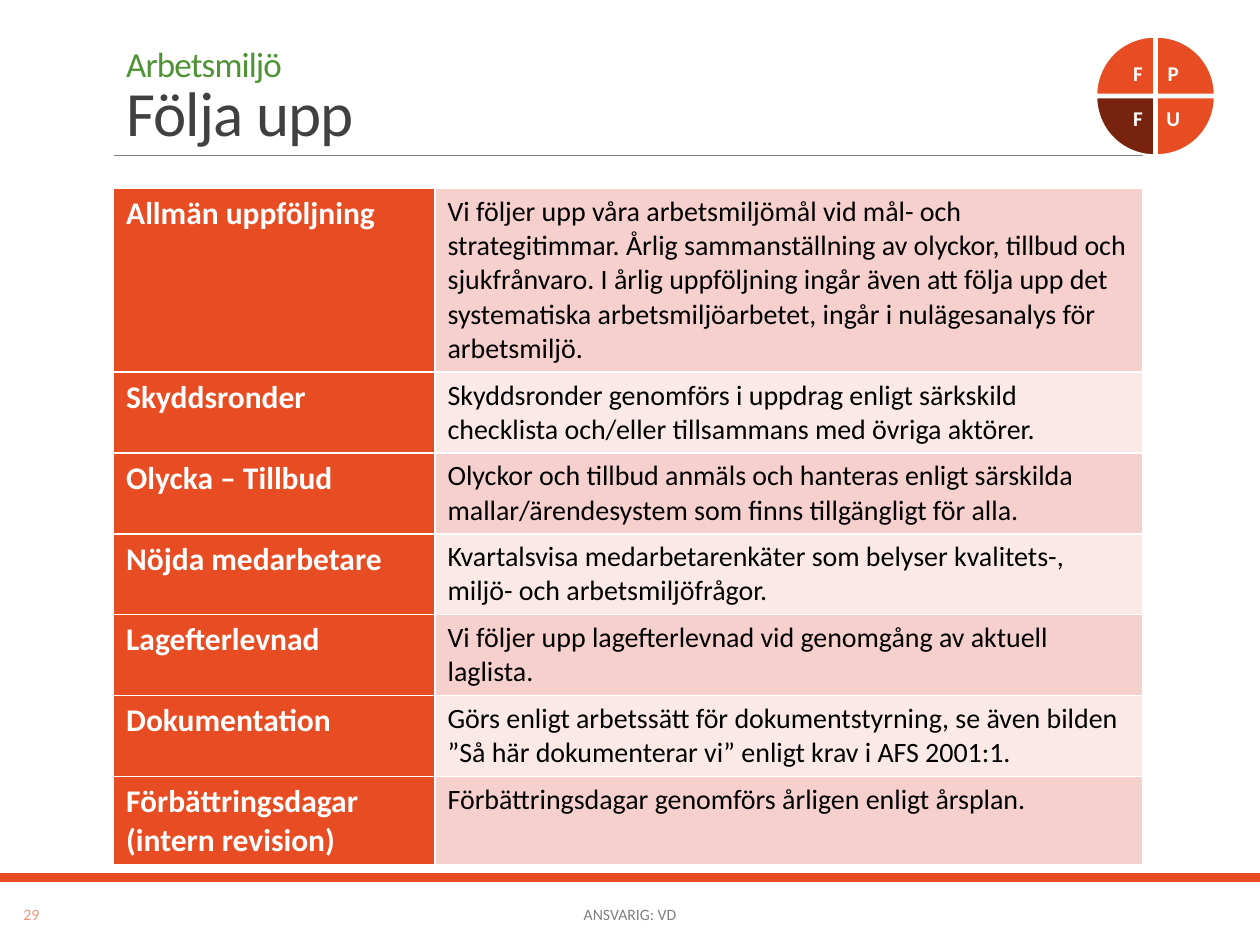
from lxml.etree import SubElement
from pptx import Presentation
from pptx.dml.color import RGBColor
from pptx.enum.shapes import MSO_CONNECTOR, MSO_SHAPE
from pptx.enum.text import MSO_ANCHOR, MSO_AUTO_SIZE, PP_ALIGN
from pptx.oxml.ns import qn
from pptx.util import Cm, Pt

ORANGE = RGBColor(0xE8, 0x4C, 0x22)
LIGHT_ORANGE = RGBColor(0xF1, 0x94, 0x7A)
BROWN = RGBColor(0x78, 0x23, 0x0D)
GREEN = RGBColor(0x4F, 0x94, 0x34)
DARK_GREY = RGBColor(0x40, 0x40, 0x40)
GREY = RGBColor(0x80, 0x80, 0x80)
WHITE = RGBColor(0xFF, 0xFF, 0xFF)
BLACK = RGBColor(0, 0, 0)
BANDS = (RGBColor(0xF6, 0xD0, 0xCD), RGBColor(0xFB, 0xE9, 0xE8))
FONT = "Calibri"

FOLLOW_UPS = [
    ("Allmän uppföljning", "Vi följer upp våra arbetsmiljömål vid mål- och strategitimmar. "
     "Årlig sammanställning av olyckor, tillbud och sjukfrånvaro. I årlig uppföljning ingår "
     "även att följa upp det systematiska arbetsmiljöarbetet, ingår i nulägesanalys för "
     "arbetsmiljö.", 3.7),
    ("Skyddsronder", "Skyddsronder genomförs i uppdrag enligt särkskild checklista och/eller "
     "tillsammans med övriga aktörer.", 1.63),
    ("Olycka – Tillbud", "Olyckor och tillbud anmäls och hanteras enligt särskilda "
     "mallar/ärendesystem som finns tillgängligt för alla.", 1.63),
    ("Nöjda medarbetare", "Kvartalsvisa medarbetarenkäter som belyser kvalitets-, miljö- och "
     "arbetsmiljöfrågor.", 1.63),
    ("Lagefterlevnad", "Vi följer upp lagefterlevnad vid genomgång av aktuell laglista.", 1.63),
    ("Dokumentation", "Görs enligt arbetssätt för dokumentstyrning, se även bilden ”Så här "
     "dokumenterar vi” enligt krav i AFS 2001:1.", 1.63),
    ("Förbättringsdagar\n(intern revision)",
     "Förbättringsdagar genomförs årligen enligt årsplan.", 1.79),
]


def set_font(font, size, color, bold=False):
    """Apply the deck's typeface with a size, colour and weight."""
    font.name = FONT
    font.size = Pt(size)
    font.bold = bold
    font.color.rgb = color


def add_label(slide, text, left, top, width, height, size, color, bold=False):
    """Place a one-line label centred in its box."""
    frame = slide.shapes.add_textbox(Cm(left), Cm(top), Cm(width), Cm(height)).text_frame
    frame.margin_left = frame.margin_right = frame.margin_top = frame.margin_bottom = 0
    frame.word_wrap = True
    frame.vertical_anchor = MSO_ANCHOR.MIDDLE
    paragraph = frame.paragraphs[0]
    paragraph.text = text
    paragraph.alignment = PP_ALIGN.CENTER
    set_font(paragraph.font, size, color, bold)


def add_heading(slide, left, top, width, height, rule_width):
    """Fill the title placeholder and underline it with a thin rule."""
    title = slide.shapes.title
    title.left, title.top, title.width, title.height = Cm(left), Cm(top), Cm(width), Cm(height)
    frame = title.text_frame
    frame.auto_size = MSO_AUTO_SIZE.NONE
    frame.word_wrap = True
    frame.vertical_anchor = MSO_ANCHOR.BOTTOM
    paragraph = frame.paragraphs[0]
    paragraph.alignment = PP_ALIGN.LEFT
    paragraph.line_spacing = 0.85
    for text, size, color in (("Arbetsmiljö", 20, GREEN), ("Följa upp", 36, DARK_GREY)):
        if paragraph.runs:
            paragraph.add_line_break()
        run = paragraph.add_run()
        run.text = text
        set_font(run.font, size, color)
        run.font._element.set("spc", "-50")

    bottom = Cm(top + height)
    rule = slide.shapes.add_connector(
        MSO_CONNECTOR.STRAIGHT, Cm(left), bottom, Cm(left + rule_width), bottom)
    rule.line.color.rgb = GREY
    rule.line.width = Pt(0.5)
    SubElement(rule._element.spPr, qn("a:effectLst"))


def fill_cell(cell, text, fill, size, color, bold=False):
    """Write a table cell with its own fill and font."""
    cell.fill.solid()
    cell.fill.fore_color.rgb = fill
    cell.text = text
    for paragraph in cell.text_frame.paragraphs:
        set_font(paragraph.font, size, color, bold)


def add_follow_up_table(slide, left, top, column_widths):
    """Build the table of follow-up areas and how each is handled."""
    heights = [height for _, _, height in FOLLOW_UPS]
    table = slide.shapes.add_table(
        len(FOLLOW_UPS), 2, Cm(left), Cm(top), Cm(sum(column_widths)), Cm(sum(heights))).table
    table.first_row = table.horz_banding = False
    for column, width in zip(table.columns, column_widths):
        column.width = Cm(width)
    for index, (area, description, height) in enumerate(FOLLOW_UPS):
        table.rows[index].height = Cm(height)
        fill_cell(table.cell(index, 0), area, ORANGE, 18, WHITE, True)
        fill_cell(table.cell(index, 1), description, BANDS[index % 2], 16, BLACK)


def add_phase_wheel(slide, left, top, size):
    """Draw the four-phase wheel with the current phase darkened."""
    wedge_size, gap, label_size, label_inset = 1.17, 0.05, 0.84, 0.32
    step = wedge_size + gap
    wedges = (("F", 0, 0, ORANGE), ("P", 1, 0, ORANGE), ("U", 1, 1, ORANGE), ("F", 0, 1, BROWN))
    for quarter, (letter, column, row, color) in enumerate(wedges):
        wedge = slide.shapes.add_shape(
            MSO_SHAPE.PIE_WEDGE, Cm(left + column * step), Cm(top + row * step),
            Cm(wedge_size), Cm(wedge_size))
        wedge.rotation = 90 * quarter
        wedge.shadow.inherit = False
        wedge.fill.solid()
        wedge.fill.fore_color.rgb = color
        wedge.line.color.rgb = WHITE
        wedge.line.width = Pt(1.25)
        label_left = left + (size - label_size - 0.42 if column else label_inset + 0.1)
        label_top = top + (step if row else label_inset)
        add_label(slide, letter, label_left, label_top, label_size, label_size, 12, WHITE, True)


def add_footer(slide, top, width):
    """Draw the footer bar with the page number and the responsible role."""
    bar = slide.shapes.add_shape(MSO_SHAPE.RECTANGLE, 0, Cm(top), Cm(width), Cm(0.18))
    bar.shadow.inherit = False
    bar.fill.solid()
    bar.fill.fore_color.rgb = ORANGE
    bar.line.fill.background()
    text_top, text_width = top + 0.33, 10.06
    add_label(slide, "29", 0.1, text_top, 1.07, 1.02, 9, LIGHT_ORANGE)
    add_label(slide, "ANSVARIG: VD", (width - text_width) / 2, text_top, text_width, 1.02, 9, GREY)


def main():
    """Build and save the slide."""
    presentation = Presentation()
    presentation.slide_width, presentation.slide_height = Cm(25.4), Cm(19.05)
    slide = presentation.slides.add_slide(presentation.slide_layouts[5])
    add_footer(slide, 17.6, 25.4)
    add_heading(slide, 2.29, 0.79, 20.96, 2.34, 20.75)
    add_follow_up_table(slide, 2.29, 3.8, (6.48, 14.27))
    add_phase_wheel(slide, 22.1, 0.74, 2.39)
    presentation.save("out.pptx")


if __name__ == "__main__":
    main()
